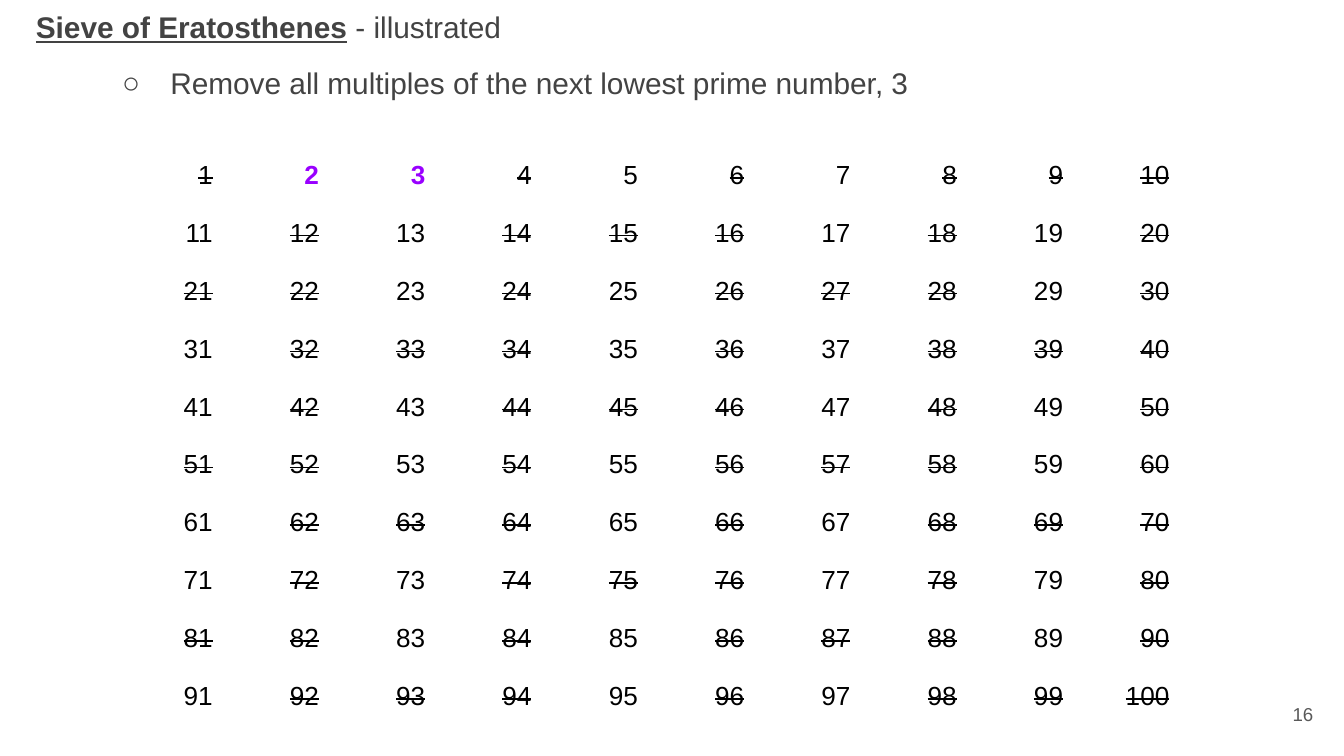
import pptx
import pptx.dml.color
import pptx.enum.text
import pptx.oxml
import pptx.oxml.ns
import pptx.util
from pptx.util import Cm, Pt

INSET = Cm(0.25)
RIGHT = pptx.enum.text.PP_ALIGN.RIGHT


def color(hex_value):
    return pptx.dml.color.RGBColor.from_string(hex_value)


def add_run(paragraph, text, size, hex_value, bold=False):
    run = paragraph.add_run()
    run.text = text
    run.font.name = "Arial"
    run.font.size = Pt(size)
    run.font.bold = bold
    run.font.color.rgb = color(hex_value)
    return run


deck = pptx.Presentation()
deck.slide_width, deck.slide_height = Cm(25.4), Cm(14.29)
slide = deck.slides.add_slide(deck.slide_layouts[6])

# Slide number and heading frames
page_number = slide.shapes.add_textbox(Cm(23.55), Cm(12.95), Cm(1.52), Cm(1.09)).text_frame
heading = slide.shapes.add_textbox(Cm(0.43), Cm(-0.18), Cm(24.61), Cm(2.24)).text_frame
for frame in (page_number, heading):
    frame.word_wrap = True
    frame.margin_left = frame.margin_right = INSET
    frame.margin_top = frame.margin_bottom = INSET

page_number.vertical_anchor = pptx.enum.text.MSO_ANCHOR.MIDDLE
page_number.paragraphs[0].alignment = RIGHT
add_run(page_number.paragraphs[0], "16", 10, "595959")

# Heading and the step shown
title = heading.paragraphs[0]
step = heading.add_paragraph()
for line in (title, step):
    line.line_spacing = 1.15
    line.space_before = Pt(8)
add_run(title, "Sieve of Eratosthenes", 16, "434343", bold=True).font.underline = True
add_run(title, " - illustrated", 16, "434343")

step.level = 1
step.space_after = Pt(8)
add_run(step, "Remove all multiples of the next lowest prime number, 3", 16, "434343")

# Hollow round bullet with a hanging indent
step_format = step._p.get_or_add_pPr()
step_format.set("marL", str(Cm(2.54)))
step_format.set("indent", str(Cm(-0.91)))
namespace = pptx.oxml.ns.nsdecls("a")
for bullet_xml in (
    f'<a:buClr {namespace}><a:srgbClr val="434343"/></a:buClr>',
    f'<a:buFont {namespace} typeface="Arial"/>',
    f'<a:buChar {namespace} char="○"/>',
):
    step_format.append(pptx.oxml.parse_xml(bullet_xml))

# Number grid: 1 and the multiples of the primes found so far are struck out
SIDE = 10
PRIMES = (2, 3)
grid = slide.shapes.add_table(SIDE, SIDE, Cm(2.26), Cm(2.79), Cm(20.12), Cm(10.6)).table
grid.first_row = grid.horz_banding = False
for column in grid.columns:
    column.width = Cm(2.01)
for row in grid.rows:
    row.height = Cm(1.06)

for number, cell in enumerate(grid.iter_cells(), start=1):
    cell.fill.background()
    cell.margin_left = cell.margin_right = INSET
    cell.margin_top = cell.margin_bottom = INSET
    paragraph = cell.text_frame.paragraphs[0]
    paragraph.alignment = RIGHT
    is_found = number in PRIMES
    run = add_run(paragraph, str(number), 14, "9900FF" if is_found else "000000", is_found)
    is_multiple = any(number % prime == 0 for prime in PRIMES)
    if number == 1 or (is_multiple and not is_found):
        run.font._element.set("strike", "sngStrike")

deck.save("out.pptx")
